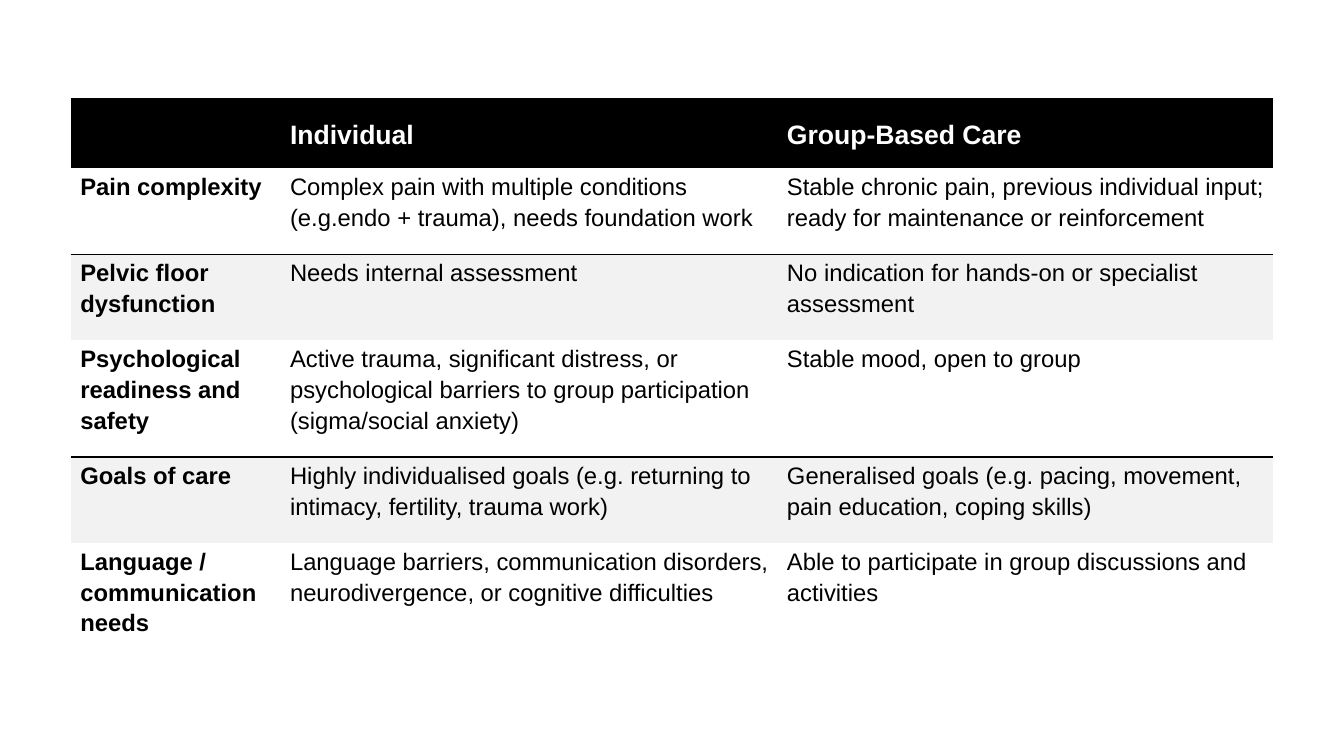
"""Build a slide comparing individual and group-based care in a table."""
from lxml import etree
from pptx import Presentation
from pptx.dml.color import RGBColor
from pptx.enum import text
from pptx.oxml import ns
from pptx.util import Pt

BLACK = RGBColor(0x00, 0x00, 0x00)
WHITE = RGBColor(0xFF, 0xFF, 0xFF)
GREY = RGBColor(0xF2, 0xF2, 0xF2)

COLUMN_WIDTHS = [149.8, 355, 353.9]
ROW_HEIGHTS = [50.2, 61.4, 61.4, 83.5, 61.4, 83.5]
RULED_ROWS = [1, 3]
ROWS = [
    ["", "Individual", "Group-Based Care"],
    ["Pain complexity",
     "Complex pain with multiple conditions (e.g.endo + trauma), needs foundation work",
     "Stable chronic pain, previous individual input; ready for maintenance or reinforcement"],
    ["Pelvic floor dysfunction",
     "Needs internal assessment",
     "No indication for hands-on or specialist assessment"],
    ["Psychological readiness and safety",
     "Active trauma, significant distress, or psychological barriers to group participation "
     "(sigma/social anxiety)",
     "Stable mood, open to group"],
    ["Goals of care",
     "Highly individualised goals (e.g. returning to intimacy, fertility, trauma work)",
     "Generalised goals (e.g. pacing, movement, pain education, coping skills)"],
    ["Language / communication needs",
     "Language barriers, communication disorders, neurodivergence, or cognitive difficulties",
     "Able to participate in group discussions and activities"],
]


def add_border(cell, edge, ruled):
    properties = cell._tc.get_or_add_tcPr()
    line = etree.SubElement(properties, ns.qn(f"a:{edge}"), w=str(Pt(1)))
    if ruled:
        fill = etree.SubElement(line, ns.qn("a:solidFill"))
        etree.SubElement(fill, ns.qn("a:srgbClr"), val=str(BLACK))
    else:
        etree.SubElement(line, ns.qn("a:noFill"))


presentation = Presentation()
presentation.slide_width = Pt(960)
presentation.slide_height = Pt(540)
slide = presentation.slides.add_slide(presentation.slide_layouts[6])

table = slide.shapes.add_table(
    len(ROWS), len(COLUMN_WIDTHS), Pt(50.4), Pt(70),
    Pt(sum(COLUMN_WIDTHS)), Pt(sum(ROW_HEIGHTS))).table
table.first_row = False
table.horz_banding = False
for column, width in zip(table.columns, COLUMN_WIDTHS):
    column.width = Pt(width)

for row_index, (row, height) in enumerate(zip(table.rows, ROW_HEIGHTS)):
    row.height = Pt(height)
    header = row_index == 0
    for column_index, cell in enumerate(row.cells):
        cell_format = {
            "margin_left": Pt(7),
            "margin_right": Pt(5),
            "margin_top": Pt(10 if header else 1.4),
            "margin_bottom": Pt(10),
            "vertical_anchor": text.MSO_ANCHOR.MIDDLE if header else text.MSO_ANCHOR.TOP,
        }
        for name, value in cell_format.items():
            setattr(cell, name, value)

        for edge in ("lnL", "lnR"):
            add_border(cell, edge, False)
        add_border(cell, "lnT", row_index - 1 in RULED_ROWS)
        add_border(cell, "lnB", row_index in RULED_ROWS)

        if header or row_index % 2 == 0:
            cell.fill.solid()
            cell.fill.fore_color.rgb = BLACK if header else GREY
        else:
            cell.fill.background()

        wording = ROWS[row_index][column_index]
        if not wording:
            continue
        paragraph = cell.text_frame.paragraphs[0]
        paragraph.line_spacing = 1.15
        paragraph.space_after = Pt(10)
        run = paragraph.add_run()
        run.text = wording
        font_format = {
            "name": "Arial",
            "size": Pt(19 if header else 17),
            "bold": header or column_index == 0,
        }
        for name, value in font_format.items():
            setattr(run.font, name, value)
        run.font.color.rgb = WHITE if header else BLACK

presentation.save("out.pptx")
